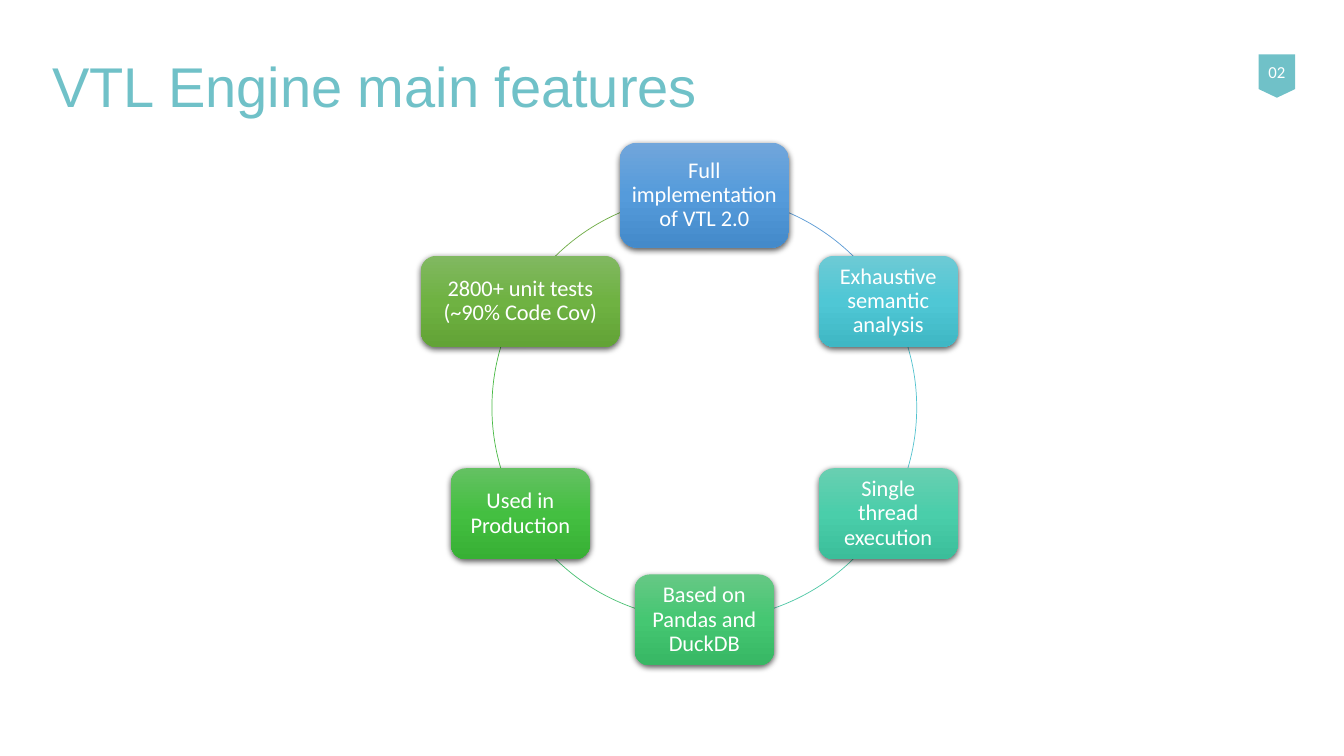
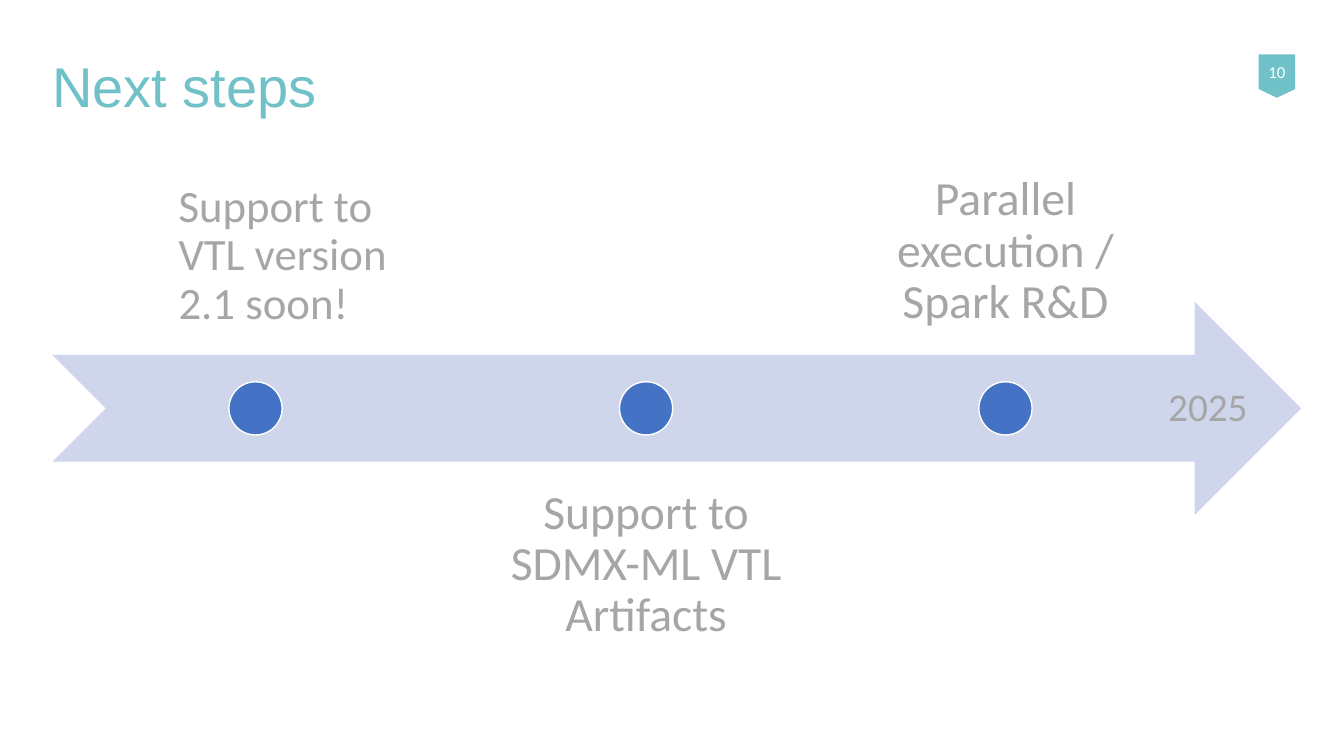
from copy import deepcopy
from math import cos, radians, sin

from lxml import etree
from pptx import Presentation
from pptx.dml.color import RGBColor
from pptx.enum import shapes as es, text as et
from pptx.oxml import ns
from pptx.util import Pt

TEAL, WHITE, GREY = "70C1C8", "FFFFFF", "A6A6A6"
PALE, BLUE = "CFD5EA", "4472C4"
HEAD, BODY = "Arial", "Calibri"
KIND, ALIGN, ANCHOR = es.MSO_SHAPE, et.PP_ALIGN, et.MSO_ANCHOR

# Label, width, height, gradient colours, colour of the arc that follows
NODES = [
    ("Full implementation of VTL 2.0", 121, 75,
     ("71A6DB", "559BDB", "448ACA"), "5B9BD5"),
    ("Exhaustive semantic analysis", 99.5, 65,
     ("6DCAD5", "4FC7D5", "3FB7C4"), "55C3CF"),
    ("Single thread execution", 99.5, 65,
     ("69CFB1", "4ACEAA", "3BBE9A"), "50C8A7"),
    ("Based on Pandas and DuckDB", 99.5, 65,
     ("66C885", "45C772", "37B764"), "4BC174"),
    ("Used in Production", 99.5, 65,
     ("64C162", "44BF41", "37B034"), "4ABA46"),
    ("2800+ unit tests (~90% Code Cov)", 142, 65,
     ("81B861", "6FB242", "62A336"), "70AD47"),
]


def rgb(code):
    return RGBColor.from_string(code)


def write(shape, lines, size, color, font=BODY, align=ALIGN.CENTER,
          anchor=ANCHOR.MIDDLE, inset=0, space=0.9, wrap=True):
    """Fill the text frame of a shape, one paragraph for each line."""
    frame = shape.text_frame
    frame.word_wrap = wrap
    frame.vertical_anchor = anchor
    frame.margin_left = frame.margin_right = Pt(inset)
    frame.margin_top = frame.margin_bottom = Pt(inset)
    for i, line in enumerate(lines):
        para = frame.add_paragraph() if i else frame.paragraphs[0]
        para.alignment = align
        para.line_spacing = space
        para.space_before = Pt(0)
        run = para.add_run()
        run.text = line
        run.font.size = Pt(size)
        run.font.name = font
        run.font.color.rgb = rgb(color)


def draw(slide, kind, box, fill=None, line=None, width=1):
    """Add a flat preset shape."""
    shape = slide.shapes.add_shape(kind, *map(Pt, box))
    shape.shadow.inherit = False
    if fill:
        shape.fill.solid()
        shape.fill.fore_color.rgb = rgb(fill)
    else:
        shape.fill.background()
    if line:
        shape.line.color.rgb = rgb(line)
        shape.line.width = Pt(width)
    else:
        shape.line.fill.background()
    return shape


def label(slide, box, lines, size, **style):
    text = slide.shapes.add_textbox(*map(Pt, box))
    write(text, lines, size, GREY, **style)


def shade(shape, colors):
    """Give a shape a downward gradient and a soft shadow."""
    shape.fill.gradient()
    shape.fill.gradient_angle = 270
    props = shape._element.spPr
    first, last = props.xpath(".//a:gs")
    last.addprevious(deepcopy(first))
    for i, stop in enumerate(shape.fill.gradient_stops):
        stop.position = i / 2
        stop.color.rgb = rgb(colors[i])
    glow = etree.SubElement(
        props.find(ns.qn("a:effectLst")), ns.qn("a:outerShdw"),
        blurRad=str(Pt(4.5)), dist=str(Pt(1.5)), dir="5400000",
        algn="ctr", rotWithShape="0")
    tint = etree.SubElement(glow, ns.qn("a:srgbClr"), val="000000")
    etree.SubElement(tint, ns.qn("a:alpha"), val="63000")


def start(deck, title, number):
    """Add a slide with its title and page badge."""
    slide = deck.slides.add_slide(deck.slide_layouts[5])
    head = slide.shapes.title
    head.left, head.top, head.width, head.height = map(Pt, (30, 12, 828, 104))
    write(head, [title], 40, TEAL, HEAD, ALIGN.LEFT, inset=7.2)
    badge = draw(slide, KIND.FLOWCHART_OFFPAGE_CONNECTOR,
                 (899, 38.8, 26.2, 31), TEAL)
    write(badge, [number], 12, WHITE, space=1, wrap=False)
    return slide


def ring(slide, box):
    """Place the nodes evenly round the circle that fills the box."""
    x, y, size, _ = box
    rad, step = size / 2, 360 / len(NODES)
    # Arcs from node to node, behind the nodes
    for i, (*_, color) in enumerate(NODES):
        arc = draw(slide, KIND.ARC, box, line=color, width=0.5)
        for j in range(2):
            angle = (270 + (i + j) * step) % 360
            arc.adjustments[j] = angle * 0.6  # 60000ths over 100000
    # Nodes
    for i, (name, wide, high, colors, _) in enumerate(NODES):
        angle = radians(270 + i * step)
        left = x + rad + rad * cos(angle) - wide / 2
        top = y + rad + rad * sin(angle) - high / 2
        node = draw(slide, KIND.ROUNDED_RECTANGLE, (left, top, wide, high))
        shade(node, colors)
        write(node, [name], 16, WHITE, inset=4.8)


def road(slide, box):
    """Place a timeline arrow with its steps above and below."""
    x, y, wide, high = box
    band, mid, dot, pad = high * 0.4, y + high / 2, 38, 18.7
    draw(slide, KIND.NOTCHED_RIGHT_ARROW,
         (x, mid - band / 2, wide, band), PALE)
    # Centre, width, text, size, alignment, whether above the arrow
    steps = [
        (145, 110, ["Support to", "VTL version", "2.1 soon!"], 32,
         ALIGN.LEFT, True),
        (424, 207, ["Support to SDMX-ML VTL Artifacts"], 34,
         ALIGN.CENTER, False),
        (680.7, 207, ["Parallel execution / Spark R&D"], 34,
         ALIGN.CENTER, True),
    ]
    for pos, span, lines, size, align, above in steps:
        top = y if above else y + high - band
        left = x + pos - span / 2
        if align == ALIGN.LEFT:
            left, span = x + 90, 182
        label(slide, (left, top + pad, span, band - 2 * pad), lines, size,
              align=align, anchor=ANCHOR.BOTTOM if above else ANCHOR.TOP)
        draw(slide, KIND.OVAL, (x + pos - dot / 2, mid - dot / 2, dot, dot),
             BLUE, WHITE)
    # Year in the arrow head
    label(slide, (x + 797, mid - 21, 75, 42), ["2025"], 28, align=ALIGN.LEFT)


def main():
    deck = Presentation()
    deck.slide_width, deck.slide_height = Pt(960), Pt(540)
    ring(start(deck, "VTL Engine main features", "02"),
         (351.4, 139.4, 303.4, 303.4))
    road(start(deck, "Next steps", "10"), (37.5, 101.2, 892, 381))
    deck.save("out.pptx")


if __name__ == "__main__":
    main()
